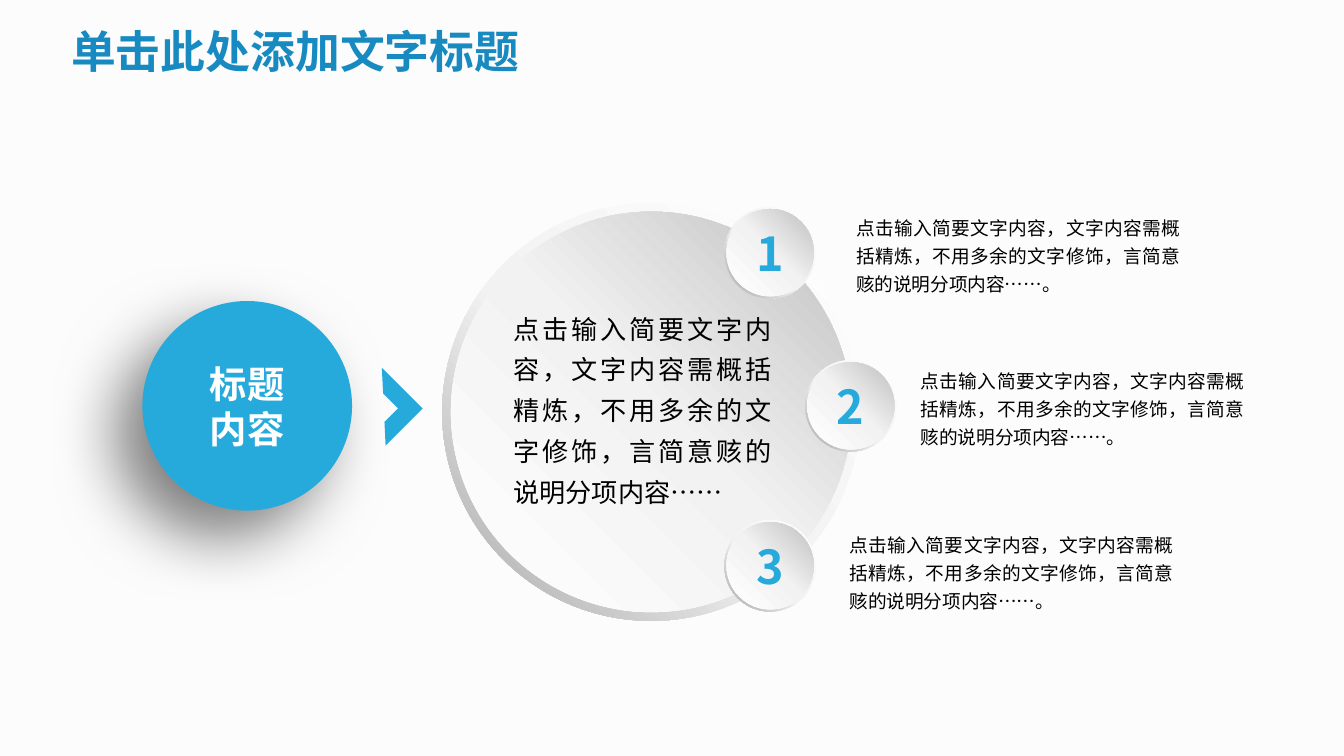
import copy
from dataclasses import dataclass

import pptx
import pptx.dml.color
import pptx.enum.shapes
import pptx.enum.text
import pptx.oxml
import pptx.oxml.ns
import pptx.util
from lxml import etree

Inches = pptx.util.Inches
Pt = pptx.util.Pt
Shape = pptx.enum.shapes.MSO_SHAPE
Align = pptx.enum.text.PP_ALIGN
Anchor = pptx.enum.text.MSO_ANCHOR
AutoSize = pptx.enum.text.MSO_AUTO_SIZE
qn = pptx.oxml.ns.qn


@dataclass(frozen=True)
class Theme:
    font: str = "Noto Sans CJK SC"
    background: str = "FCFCFC"
    heading: str = "178AC1"
    accent: str = "26AADB"
    light: str = "FFFFFF"
    dark: str = "000000"
    rim: tuple = ((0, "FFFFFF"), (0.55, "F2F2F2"), (1, "A6A6A6"))
    face: tuple = ((0, "FFFFFF"), (0.51, "F2F2F2"), (1, "BFBFBF"))
    title_size: int = 24
    number_size: int = 25
    topic_size: int = 20
    summary_size: int = 14
    item_size: int = 10


THEME = Theme()
SUMMARY = "点击输入简要文字内容，文字内容需概括精炼，不用多余的文字修饰，言简意赅的说明分项内容……"
ITEMS = (
    ("1", (5.39, 1.54), (6.37, 1.57)),
    ("2", (5.99, 2.68), (6.85, 2.71)),
    ("3", (5.39, 3.87), (6.32, 3.93)),
)


def rgb(value):
    return pptx.dml.color.RGBColor.from_string(value)


def write(frame, lines, size, color, bold=False, align=Align.LEFT, spacing=None):
    for index, line in enumerate(lines):
        paragraph = frame.add_paragraph() if index else frame.paragraphs[0]
        paragraph.alignment = align
        if spacing is not None:
            paragraph.line_spacing = spacing
        run = paragraph.add_run()
        run.text = line
        run.font.name = THEME.font
        run.font.size = Pt(size)
        run.font.bold = bold
        run.font.color.rgb = rgb(color)
        etree.SubElement(run.font._element, qn("a:ea"), typeface=THEME.font)


def clear_margins(frame):
    frame.margin_left = frame.margin_right = 0
    frame.margin_top = frame.margin_bottom = 0


def add_text(slide, box, lines, size, color, wrap=True, **style):
    frame = slide.shapes.add_textbox(*map(Inches, box)).text_frame
    clear_margins(frame)
    frame.word_wrap = wrap
    frame.auto_size = AutoSize.SHAPE_TO_FIT_TEXT
    write(frame, lines, size, color, **style)


def add_plain_shape(shapes, kind, box):
    shape = shapes.add_shape(kind, *map(Inches, box))
    shape.shadow.inherit = False
    shape.line.fill.background()
    return shape


def fill_solid(shape, color):
    shape.fill.solid()
    shape.fill.fore_color.rgb = rgb(color)


def fill_gradient(shape, stops, angle):
    shape.fill.gradient()
    shape.fill.gradient_angle = angle
    stop_list = shape._element.spPr.find(qn("a:gradFill")).find(qn("a:gsLst"))
    stop_list.append(copy.deepcopy(stop_list[-1]))
    for stop, (position, color) in zip(shape.fill.gradient_stops, stops):
        stop.position = position
        stop.color.rgb = rgb(color)


def add_soft_shadow(shape):
    effects = shape._element.spPr.find(qn("a:effectLst"))
    shadow = etree.SubElement(
        effects, qn("a:outerShdw"), blurRad=str(Pt(35)), dist=str(Pt(20)),
        dir=str(135 * 60000), algn="tr", rotWithShape="0")
    color = etree.SubElement(shadow, qn("a:srgbClr"), val=THEME.dark)
    etree.SubElement(color, qn("a:alpha"), val="50000")


def add_title(slide, box):
    title = slide.shapes.title
    title.left, title.top, title.width, title.height = map(Inches, box)
    frame = title.text_frame
    frame.word_wrap = False
    frame.auto_size = AutoSize.SHAPE_TO_FIT_TEXT
    frame.vertical_anchor = Anchor.TOP
    write(frame, ["单击此处添加文字标题"], THEME.title_size, THEME.heading, bold=True)


def add_topic(slide, left, top, diameter):
    circle = add_plain_shape(slide.shapes, Shape.OVAL, (left, top, diameter, diameter))
    fill_solid(circle, THEME.accent)
    add_soft_shadow(circle)
    add_text(slide, (left + 0.5, top + 0.45, diameter - 1, 0.67), ["标题", "内容"],
             THEME.topic_size, THEME.light, wrap=False, bold=True, align=Align.CENTER)


def add_chevron(slide, box):
    chevron = add_plain_shape(slide.shapes, Shape.HALF_FRAME, box)
    chevron.rotation = 135
    fill_solid(chevron, THEME.accent)


def add_disc(slide, left, top, outer, inner):
    group = slide.shapes.add_group_shape()
    inset = (outer - inner) / 2
    rim = add_plain_shape(group.shapes, Shape.DONUT, (left, top, outer, outer))
    rim.adjustments[0] = 0.049
    fill_gradient(rim, THEME.rim, 225)
    face = add_plain_shape(group.shapes, Shape.OVAL, (left + inset, top + inset, inner, inner))
    fill_gradient(face, THEME.face, 45)
    return face


def add_summary(slide, left, top):
    add_disc(slide, left, top, 3.11, 2.98)
    add_text(slide, (left + 0.53, top + 0.75, 1.92, 1.5), [SUMMARY],
             THEME.summary_size, THEME.dark, align=Align.JUSTIFY, spacing=1.3)


def add_item(slide, number, disc_corner, text_corner):
    frame = add_disc(slide, *disc_corner, 0.68, 0.65).text_frame
    clear_margins(frame)
    frame.vertical_anchor = Anchor.MIDDLE
    write(frame, [number], THEME.number_size, THEME.accent, bold=True, align=Align.CENTER)
    add_text(slide, (*text_corner, 2.41, 0.63), [SUMMARY + "。"],
             THEME.item_size, THEME.dark, align=Align.JUSTIFY, spacing=Pt(15))


def main():
    presentation = pptx.Presentation()
    presentation.slide_width = Inches(10)
    presentation.slide_height = presentation.slide_width * 9 // 16
    slide = presentation.slides.add_slide(presentation.slide_layouts.get_by_name("Title Only"))
    slide.background.fill.solid()
    slide.background.fill.fore_color.rgb = rgb(THEME.background)
    add_title(slide, (0.43, 0.13, 3.57, 0.5))
    add_topic(slide, 1.06, 2.24, 1.56)
    add_summary(slide, 3.29, 1.51)
    for item in ITEMS:
        add_item(slide, *item)
    add_chevron(slide, (2.66, 2.81, 0.39, 0.43))
    presentation.save("out.pptx")


if __name__ == "__main__":
    main()
